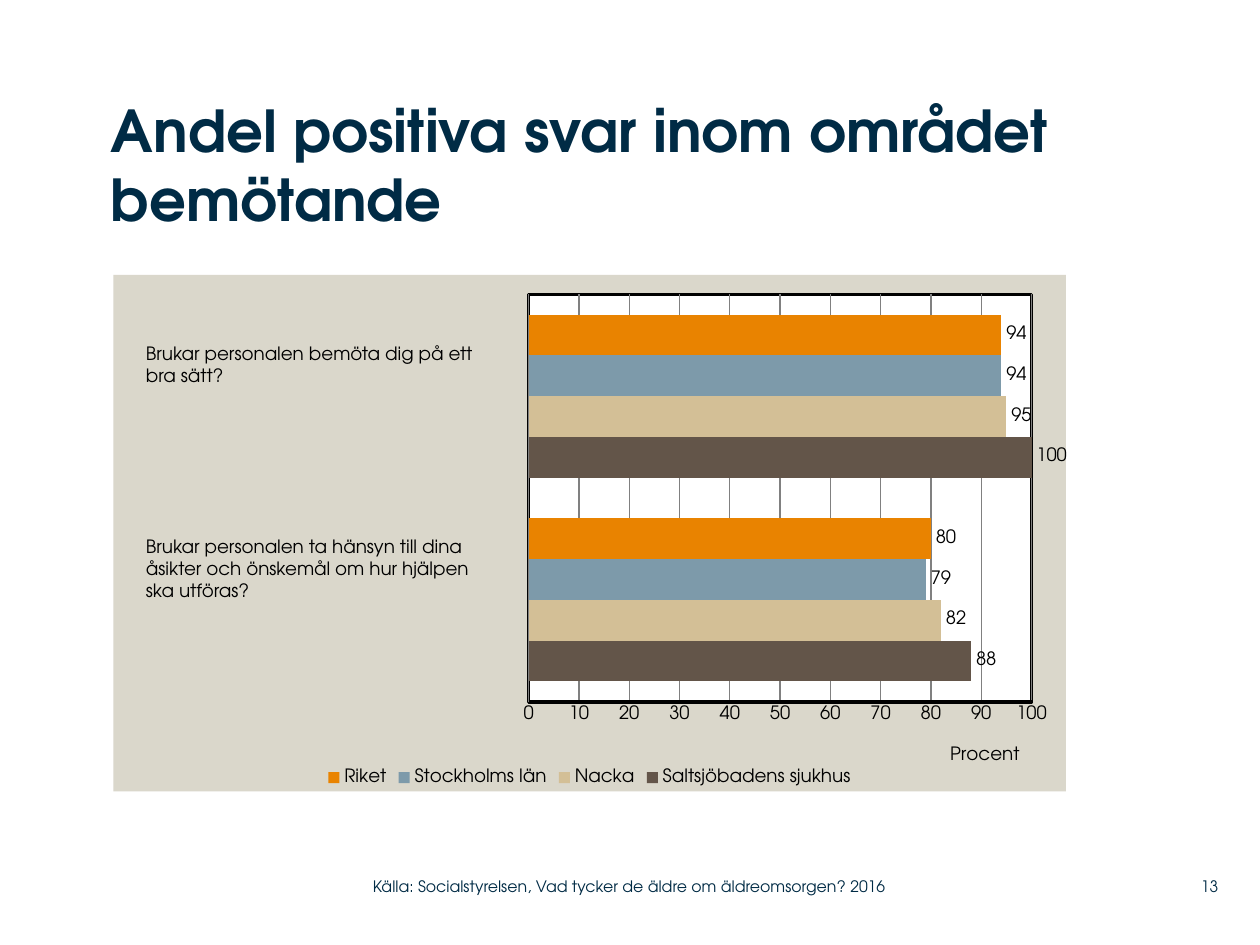
from lxml.etree import SubElement
from pptx import Presentation
from pptx.chart.data import CategoryChartData
from pptx.dml.color import RGBColor
from pptx.enum.chart import XL_CHART_TYPE, XL_LABEL_POSITION, XL_LEGEND_POSITION, XL_TICK_MARK
from pptx.enum.text import MSO_ANCHOR, PP_ALIGN
from pptx.oxml.ns import qn
from pptx.util import Pt

FONT = "TeX Gyre Adventor"
COLORS = {"navy": "002B45", "black": "000000", "grid": "808080",
          "panel": "DAD7CB", "white": "FFFFFF"}
TITLE = "Andel positiva svar inom området bemötande"
SERIES = [
    ("Saltsjöbadens sjukhus", (88, 100), "635549"),
    ("Nacka", (82, 95), "D3BF96"),
    ("Stockholms län", (79, 94), "7D9AAA"),
    ("Riket", (80, 94), "E98300"),
]
# Box in points, then the lines
QUESTIONS = [
    ((76.3, 192.2, 214, 32.4),
     ["Brukar personalen bemöta dig på ett", "bra sätt?"]),
    ((76.3, 302.4, 215, 45.4),
     ["Brukar personalen ta hänsyn till dina",
      "åsikter och önskemål om hur hjälpen", "ska utföras?"]),
]
FOOTERS = [
    ((662.4, 496, 33.8, 21), "13", PP_ALIGN.RIGHT),
    ((213.1, 496, 319, 21),
     "Källa: Socialstyrelsen, Vad tycker de äldre om äldreomsorgen? 2016", PP_ALIGN.LEFT),
]


def style(font, size, color="black", bold=False):
    font.name, font.size, font.bold = FONT, Pt(size), bold
    font.color.rgb = RGBColor.from_string(COLORS[color])


def place(shape, box):
    shape.left, shape.top, shape.width, shape.height = map(Pt, box)


def clear(frame):
    frame.margin_left = frame.margin_right = frame.margin_top = frame.margin_bottom = 0


def add_text(slide, box, lines, size, color):
    frame = slide.shapes.add_textbox(*map(Pt, box)).text_frame
    frame.word_wrap = True
    frame.text = "\n".join(lines)
    for para in frame.paragraphs:
        style(para.font, size, color)
    return frame


def set_layout(parent, **parts):
    """Fix a chart part in place, as fractions of the chart."""
    old = parent.find(qn("c:layout"))
    if old is not None:
        parent.remove(old)
    layout = SubElement(parent, qn("c:layout"))
    manual = SubElement(layout, qn("c:manualLayout"))
    for name, val in parts.items():
        SubElement(manual, qn("c:" + name)).set("val", str(val))
    return layout


def fill_part(parent, fill, line=None):
    props = SubElement(parent, qn("c:spPr"))
    solid = SubElement(props, qn("a:solidFill"))
    SubElement(solid, qn("a:srgbClr")).set("val", COLORS[fill])
    edge = SubElement(props, qn("a:ln"))
    if line:
        edge.set("w", str(Pt(2)))
        solid = SubElement(edge, qn("a:solidFill"))
        SubElement(solid, qn("a:srgbClr")).set("val", COLORS[line])
    else:
        SubElement(edge, qn("a:noFill"))
    return props


def add_bars(slide):
    data = CategoryChartData()
    data.categories = ["1", "2"]
    for name, vals, _ in SERIES:
        data.add_series(name, vals)
    chart = slide.shapes.add_chart(
        XL_CHART_TYPE.BAR_CLUSTERED, *map(Pt, (64.8, 157, 545, 295.2)), data).chart
    style(chart.font, 10.5)
    chart.has_title = False
    chart.has_legend = True
    chart.legend.position = XL_LEGEND_POSITION.BOTTOM
    chart.legend.include_in_layout = False
    style(chart.legend.font, 10.5)

    plot = chart.plots[0]
    plot.gap_width, plot.overlap, plot.vary_by_categories = 100, 0, False
    for bars, (_, _, color) in zip(plot.series, SERIES):
        bars.format.fill.solid()
        bars.format.fill.fore_color.rgb = RGBColor.from_string(color)
        labels = bars.data_labels
        labels.show_value = True
        labels.position = XL_LABEL_POSITION.OUTSIDE_END
        style(labels.font, 10.5)

    chart.category_axis.visible = False
    axis = chart.value_axis
    axis.minimum_scale, axis.maximum_scale, axis.major_unit = 0, 100, 10
    axis.major_tick_mark = axis.minor_tick_mark = XL_TICK_MARK.NONE
    style(axis.tick_labels.font, 10.5)
    axis.format.line.width = Pt(2)
    axis.format.line.color.rgb = RGBColor.from_string(COLORS["black"])
    grid = axis.major_gridlines.format.line
    grid.width = Pt(0.75)
    grid.color.rgb = RGBColor.from_string(COLORS["grid"])
    title = axis.axis_title
    title.text_frame.text = "Procent"
    style(title.text_frame.paragraphs[0].font, 10.5)
    node = title._element
    node.find(qn("c:tx")).addnext(
        set_layout(node, xMode="edge", yMode="edge", x=0.875, y=0.905))

    area = chart._chartSpace.chart.plotArea
    area.insert(0, set_layout(area, layoutTarget="inner", xMode="edge", yMode="edge",
                              x=0.436, y=0.038, w=0.528, h=0.789))
    fill_part(area, "white", "black")
    chart._chartSpace.chart.addnext(fill_part(chart._chartSpace, "panel"))


def main():
    deck = Presentation()
    deck.slide_width, deck.slide_height = Pt(720), Pt(540)
    slide = deck.slides.add_slide(deck.slide_layouts[5])
    add_bars(slide)

    title = slide.shapes.title
    place(title, (63.4, 54, 547.2, 102.2))
    frame = title.text_frame
    frame.text = TITLE
    frame.vertical_anchor = MSO_ANCHOR.TOP
    clear(frame)
    frame.paragraphs[0].alignment = PP_ALIGN.LEFT
    style(frame.paragraphs[0].font, 33, "navy", True)

    for box, lines in QUESTIONS:
        add_text(slide, box, lines, 10.5, "black")
    for box, text, align in FOOTERS:
        frame = add_text(slide, box, [text], 9, "navy")
        frame.vertical_anchor = MSO_ANCHOR.MIDDLE
        clear(frame)
        frame.paragraphs[0].alignment = align
    deck.save("out.pptx")


if __name__ == "__main__":
    main()
